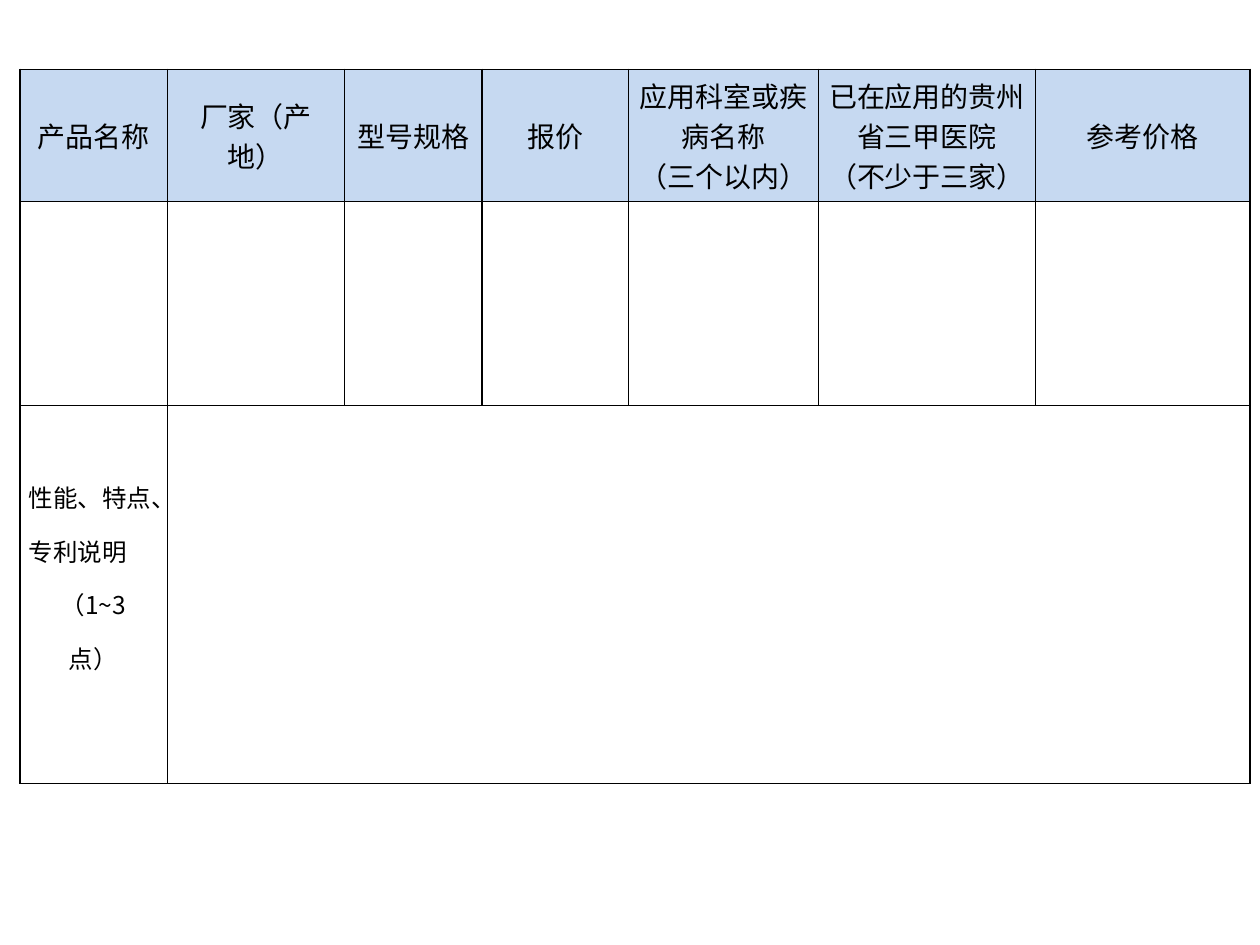
import pptx
import pptx.dml.color
import pptx.enum.text
import pptx.oxml
import pptx.oxml.ns
import pptx.util
import lxml.etree

Pt = pptx.util.Pt
ALIGN = pptx.enum.text.PP_ALIGN
BLACK = pptx.dml.color.RGBColor(0x00, 0x00, 0x00)
HEADER_BLUE = pptx.dml.color.RGBColor(0xC6, 0xD9, 0xF1)
FONT = "Noto Sans CJK SC"

COLUMN_WIDTHS = [84.3, 101.3, 78.7, 83.5, 108.6, 124, 122.6]
ROW_HEIGHTS = [75.6, 116.6, 216]
HEADINGS = [
    ["产品名称"],
    ["厂家（产地）"],
    ["型号规格"],
    ["报价"],
    ["应用科室或疾病名称", "（三个以内）"],
    ["已在应用的贵州省三甲医院", "（不少于三家）"],
    ["参考价格"],
]


def write_text(paragraph, text, size=16, color=BLACK, align=ALIGN.CENTER, spacing=None):
    paragraph.text = text
    paragraph.alignment = align
    if spacing:
        paragraph.line_spacing = spacing
    for run in paragraph.runs:
        run.font.size = Pt(size)
        run.font.name = FONT
        run.font.color.rgb = color
        east_asian = lxml.etree.SubElement(run.font._element, pptx.oxml.ns.qn("a:ea"))
        east_asian.set("typeface", FONT)


class ProductSlide:
    def __init__(self, slide, border_color=BLACK, border_width=1):
        self.slide = slide
        self.border_color = border_color
        self.border_width = border_width

    def table(self, left, top, widths, heights):
        frame = self.slide.shapes.add_table(
            len(heights), len(widths), Pt(left), Pt(top), Pt(sum(widths)), Pt(sum(heights))
        )
        grid = frame.table
        grid.first_row = False
        grid.horz_banding = False
        for column, width in zip(grid.columns, widths):
            column.width = Pt(width)
        for row, height in zip(grid.rows, heights):
            row.height = Pt(height)
        for cell in grid.iter_cells():
            self.borders(cell)
            cell.fill.background()
        return grid

    def borders(self, cell):
        properties = cell._tc.get_or_add_tcPr()
        for side in ("lnL", "lnR", "lnT", "lnB"):
            properties.append(pptx.oxml.parse_xml(
                f'<a:{side} {pptx.oxml.ns.nsdecls("a")} w="{Pt(self.border_width)}">'
                f'<a:solidFill><a:srgbClr val="{self.border_color}"/></a:solidFill></a:{side}>'
            ))

    def cell(self, cell, lines, fill=None, bottom=0, aligns=None, **style):
        cell.vertical_anchor = pptx.enum.text.MSO_ANCHOR.MIDDLE
        cell.margin_left = cell.margin_right = Pt(5)
        cell.margin_top, cell.margin_bottom = Pt(0), Pt(bottom)
        if fill is not None:
            cell.fill.solid()
            cell.fill.fore_color.rgb = fill
        frame = cell.text_frame
        for index, line in enumerate(lines):
            paragraph = frame.add_paragraph() if index else frame.paragraphs[0]
            align = aligns[index] if aligns else ALIGN.CENTER
            write_text(paragraph, line, align=align, **style)


def main():
    deck = pptx.Presentation()
    deck.slide_width, deck.slide_height = Pt(720), Pt(540)
    page = ProductSlide(deck.slides.add_slide(deck.slide_layouts[6]))
    product_table = page.table(11.3, 39.6, COLUMN_WIDTHS, ROW_HEIGHTS)
    for column, heading in enumerate(HEADINGS):
        page.cell(product_table.cell(0, column), heading, fill=HEADER_BLUE)
    product_table.cell(2, 1).merge(product_table.cell(2, 6))
    page.cell(
        product_table.cell(2, 0),
        ["性能、特点、专利说明", "（1~3\v点）"],
        aligns=[ALIGN.LEFT, ALIGN.CENTER],
        bottom=30,
        size=14,
        spacing=1.5,
    )
    deck.save("out.pptx")


if __name__ == "__main__":
    main()
